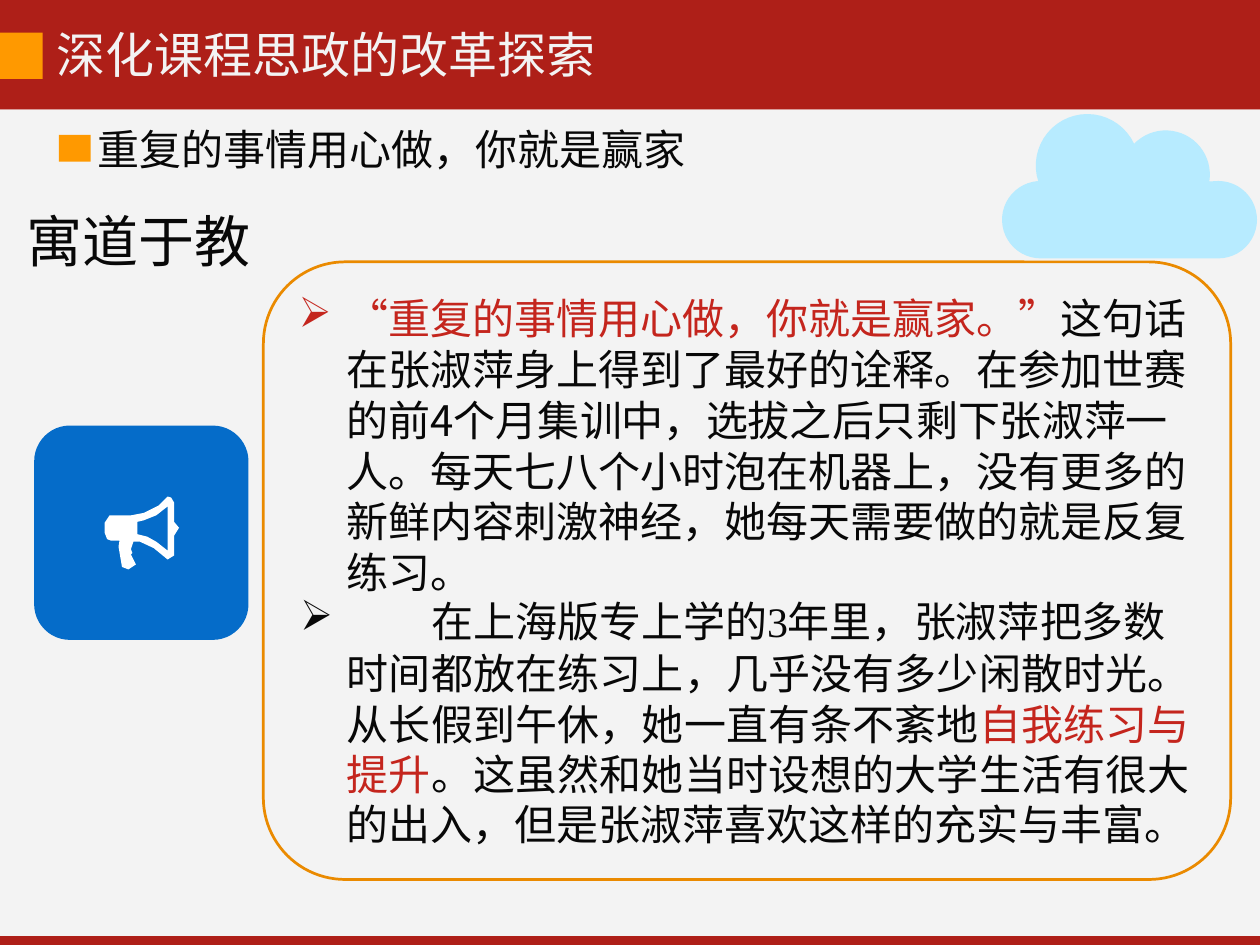
from dataclasses import dataclass
from math import cos, radians, sin
from typing import Optional

from lxml.etree import SubElement
from pptx import Presentation
from pptx.dml.color import RGBColor
from pptx.enum.shapes import MSO_SHAPE as Preset
from pptx.enum.text import PP_ALIGN as Align
from pptx.oxml.ns import qn
from pptx.util import Cm, Length, Pt

Point = tuple[float, float]


@dataclass(frozen=True)
class Theme:
    red: str = "AE1F18"
    paper: str = "F3F3F3"
    orange: str = "FF9900"
    outline: str = "EA8A00"
    blue: str = "056CC9"
    sky: str = "B7EBFF"
    white: str = "FFFFFF"
    ink: str = "080808"
    accent: str = "C4251D"
    font: str = "Noto Sans CJK SC"
    digit_font: str = "Times New Roman"
    title: int = 28
    heading: int = 32
    body: int = 24


THEME = Theme()


@dataclass(frozen=True)
class Box:
    left: float
    top: float
    width: float
    height: float

    def lengths(self) -> list[Length]:
        return [Cm(v) for v in (self.left, self.top, self.width, self.height)]


@dataclass(frozen=True)
class Span:
    text: str
    color: Optional[str] = None
    font: Optional[str] = None


@dataclass(frozen=True)
class Para:
    spans: list[Span]
    size: int = THEME.body
    color: str = THEME.ink
    margin: float = 0.03
    indent: float = 0
    before: float = 0
    line: Optional[float | Length] = None
    bullet: Optional[str] = None
    align: Optional[Align] = None


@dataclass(frozen=True)
class Arc:
    x: float
    y: float
    radius: float
    start: int
    end: int

    def points(self, steps: int = 24) -> list[Point]:
        angles = [radians(self.start + (self.end - self.start) * i / steps)
                  for i in range(steps + 1)]
        return [(self.x + self.radius * cos(a), self.y + self.radius * sin(a))
                for a in angles]


def paint(shape, fill: Optional[str], line: Optional[str] = None) -> None:
    shape.shadow.inherit = False
    if fill:
        shape.fill.solid()
        shape.fill.fore_color.rgb = RGBColor.from_string(fill)
    else:
        shape.fill.background()
    if line:
        shape.line.color.rgb = RGBColor.from_string(line)
        shape.line.width = Pt(1.56)
    else:
        shape.line.fill.background()


def draw_block(page, box: Box, fill: Optional[str], line: Optional[str] = None,
               radius: float = 0) -> None:
    kind = Preset.ROUNDED_RECTANGLE if radius else Preset.RECTANGLE
    shape = page.shapes.add_shape(kind, *box.lengths())
    if radius:
        shape.adjustments[0] = radius / min(box.width, box.height)
    paint(shape, fill, line)


def draw_outline(page, contours: list[list[Point]], fill: str) -> None:
    """Draw closed contours as one shape; later contours cut holes."""
    first, *holes = [[(Cm(x), Cm(y)) for x, y in c] for c in contours]
    builder = page.shapes.build_freeform(*first[0])
    builder.add_line_segments(first[1:], close=True)
    for hole in holes:
        builder.move_to(*hole[0])
        builder.add_line_segments(hole[1:], close=True)
    paint(builder.convert_to_shape(), fill)


def set_face(font, name: str) -> None:
    """Set the typeface for Latin and East Asian text."""
    font.name = name
    SubElement(font._rPr, qn("a:ea"), typeface=name)


def write_para(target, para: Para) -> None:
    props = target._p.get_or_add_pPr()
    props.set("marL", str(Cm(para.margin)))
    props.set("indent", str(Cm(para.indent)))
    target.space_before = Pt(para.before)
    target.line_spacing = para.line
    target.alignment = para.align
    if para.bullet:
        SubElement(props, qn("a:buChar"), char=para.bullet)
    target.font.size = Pt(para.size)
    if all(span.color is None for span in para.spans):
        target.font.color.rgb = RGBColor.from_string(para.color)
    if all(span.font is None for span in para.spans):
        set_face(target.font, THEME.font)
    for span in para.spans:
        run = target.add_run()
        run.text = span.text
        if any(s.color for s in para.spans):
            run.font.color.rgb = RGBColor.from_string(span.color or para.color)
        if any(s.font for s in para.spans):
            set_face(run.font, span.font or THEME.font)


def draw_text(page, box: Box, paras: list[Para], top_inset: float) -> None:
    frame = page.shapes.add_textbox(*box.lengths()).text_frame
    frame.word_wrap = True
    frame.margin_left = frame.margin_right = frame.margin_bottom = 0
    frame.margin_top = Cm(top_inset)
    for i, para in enumerate(paras):
        write_para(frame.add_paragraph() if i else frame.paragraphs[0], para)


CLOUD = [Arc(20.98, 4.43, 0.78, 90, 265), Arc(21.92, 3.34, 1.04, 162, 335),
         Arc(23.5, 3.52, 0.89, 224, 369), Arc(24.56, 4.43, 0.78, 270, 450)]

HORN = [(3.38, 10.01), (3.2, 10.19), (2.9, 10.34), (2.64, 10.39), (2.21, 10.39),
        (2.11, 10.54), (2.11, 10.74), (2.16, 10.87), (2.24, 10.9), (2.41, 10.9),
        (2.39, 11.02), (2.46, 11.43), (2.59, 11.48), (2.74, 11.38), (2.64, 11.18),
        (2.67, 11.15), (2.64, 11.07), (2.69, 10.92), (2.82, 10.92), (3.1, 11.05),
        (3.38, 11.28), (3.51, 11.2), (3.51, 10.8), (3.61, 10.64), (3.51, 10.52),
        (3.51, 10.13), (3.45, 10.03)]
HORN_MOUTH = [(3.38, 10.21), (3.15, 10.39), (2.9, 10.49), (2.77, 10.52),
              (2.77, 10.77), (2.97, 10.82), (3.15, 10.92), (3.38, 11.1)]

TITLE = Para([Span("深化课程思政的改革探索")], THEME.title, THEME.paper, before=0.9)
STORY = [
    Para([Span("重复的事情用心做，你就是赢家")], margin=1.45, before=14.8),
    Para([Span("寓道于教")], THEME.heading, before=18.5),
    Para([Span("“重复的事情用心做，你就是赢家。”", THEME.accent),
          Span("这句话 在张淑萍身上得到了最好的诠释。在参加世赛 的前4个月集训中，"
               "选拔之后只剩下张淑萍一 人。每天七八个小时泡在机器上，没有更多的 "
               "新鲜内容刺激神经，她每天需要做的就是反复 练习。")],
         margin=6.48, indent=-0.97, before=10.5, line=1.01, bullet="➢"),
    Para([Span("在上海版专上学的"), Span("3", font=THEME.digit_font),
          Span("年里，张淑萍把多数")],
         margin=8.18, indent=-2.64, line=Pt(27.6), bullet="➢"),
    Para([Span("时间都放在练习上，几乎没有多少闲散时光。 从长假到午休，她一直有条不紊地"),
          Span("自我练习与 提升", THEME.accent),
          Span("。这虽然和她当时设想的大学生活有很大 的出入，"
               "但是张淑萍喜欢这样的充实与丰富。")],
         margin=6.48, before=1.2, align=Align.JUSTIFY),
]


def main() -> None:
    deck = Presentation()
    deck.slide_width, deck.slide_height = Cm(25.4), Cm(19.05)
    page = deck.slides.add_slide(deck.slide_layouts[6])

    draw_block(page, Box(0, 0, 25.4, 2.21), THEME.red)
    draw_block(page, Box(0, 18.87, 25.4, 0.18), THEME.red)
    draw_block(page, Box(0, 2.21, 25.4, 16.66), THEME.paper)
    draw_block(page, Box(0, 0.66, 0.86, 0.93), THEME.orange)
    draw_text(page, Box(1.12, 0.46, 10.92, 1.24), [TITLE], 0.03)

    draw_block(page, Box(1.19, 2.72, 0.64, 0.54), THEME.orange)
    draw_block(page, Box(0.69, 8.58, 4.32, 4.32), THEME.blue, radius=0.72)
    draw_outline(page, [HORN, HORN_MOUTH], THEME.white)
    draw_block(page, Box(5.31, 5.28, 19.5, 12.45), None, THEME.outline, 1.65)
    draw_text(page, Box(0.51, 1.96, 23.48, 15.19), STORY, 0.53)
    draw_outline(page, [[p for arc in CLOUD for p in arc.points()]], THEME.sky)

    deck.save("out.pptx")


if __name__ == "__main__":
    main()
